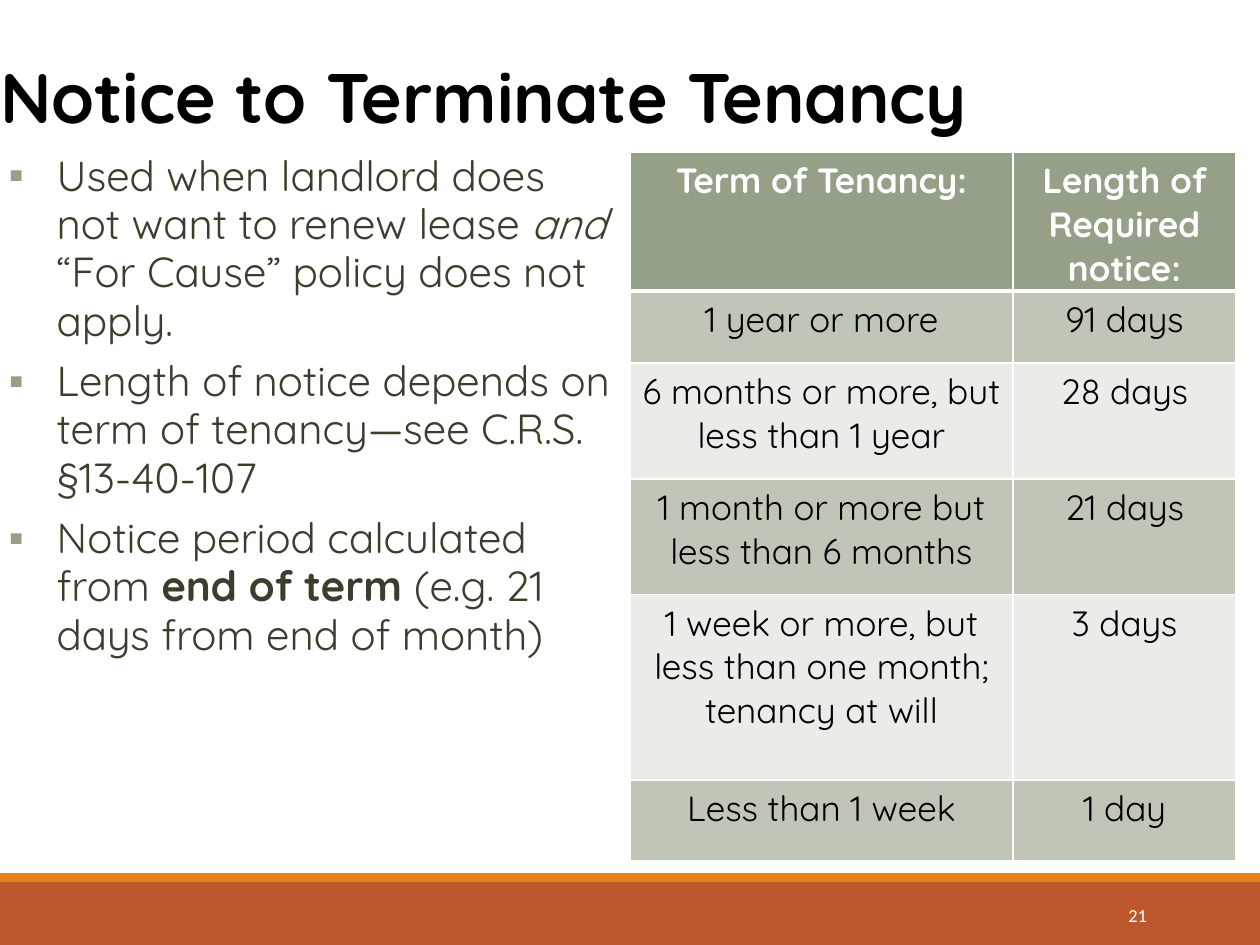
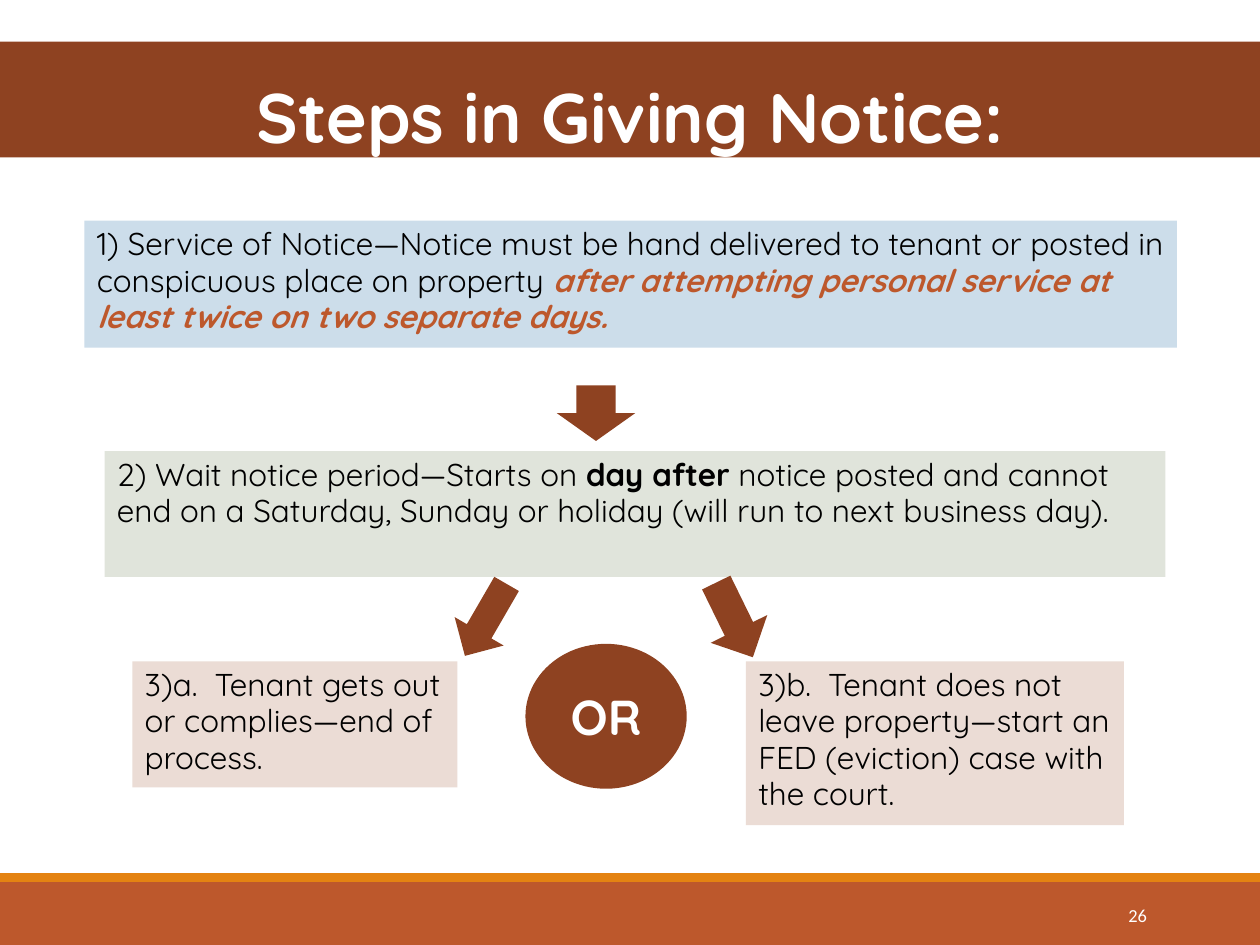
from lxml.etree import SubElement
from pptx import Presentation
from pptx.dml.color import RGBColor
from pptx.enum.shapes import MSO_SHAPE
from pptx.enum.text import MSO_ANCHOR, PP_ALIGN
from pptx.oxml.ns import qn
from pptx.util import Inches, Pt

BLACK, WHITE, BROWN, RUST, ORANGE = "000000", "FFFFFF", "8E4221", "BD582C", "E48312"
SAGE, SAGE_MID, SAGE_PALE, OLIVE = "94A088", "BFC6B8", "EAECE7", "3E3D2D"
FONT, FOOTER_FONT = "Quicksand", "Calibri"
SLIDE_W, SLIDE_H, BAND_TOP, STRIPE_H = 10, 7.5, 7, 0.07
TIGHT = 0.96  # line spacing of running text

# Each paragraph is a list of (text, style); style holds "b" and/or "i".
TENANCY_TITLE, TENANCY_PAGE = "Notice to Terminate Tenancy", 21
TENANCY_POINTS = [
    [("Used when landlord does not want to renew lease ", ""), ("and", "i"),
     (" “For Cause” policy does not apply.", "")],
    [("Length of notice depends on term of tenancy—see C.R.S. §13-40-107", "")],
    [("Notice period calculated from ", ""), ("end of term ", "b"),
     ("(e.g. 21 days from end of month)", "")],
]
NOTICE_PERIODS = [
    ("Term of Tenancy:", "Length of Required notice:"),
    ("1 year or more", "91 days"),
    ("6 months or more, but less than 1 year", "28 days"),
    ("1 month or more but less than 6 months", "21 days"),
    ("1 week or more, but less than one month; tenancy at will", "3 days"),
    ("Less than 1 week", "1 day"),
]
PERIOD_COLUMNS = [3.04, 1.77]
PERIOD_ROWS = [1.01, 0.57, 0.92, 0.92, 1.47, 0.64]

STEPS_TITLE, STEPS_PAGE = "Steps in Giving Notice:", 26
STEPS = [  # box, fill, text
    ((0.67, 1.75, 8.67, 1.01), "CCDDEA",
     [("1) Service of Notice—Notice must be hand delivered to tenant or posted in "
       "conspicuous place on property ", ""),
      ("after attempting personal service at least twice on two separate days.", "bi")]),
    ((0.83, 3.58, 8.42, 1), "E0E4DB",
     [("2) Wait notice period—Starts on ", ""), ("day after", "b"),
      (" notice posted and cannot end on a Saturday, Sunday or holiday "
       "(will run to next business day).", "")]),
    ((1.05, 5.25, 2.58, 1), "EBDCD5",
     [("3)a.  Tenant gets out or complies—end of process.", "")]),
    ((5.92, 5.25, 3, 1.3), "EBDCD5",
     [("3)b.  Tenant does not leave property—start an FED (eviction) case with "
       "the court.", "")]),
]
ARROWS = [  # box, rotation
    ((4.42, 3.06, 0.62, 0.44), 0),
    ((3.63, 4.59, 0.45, 0.66), 30.1),
    ((5.58, 4.59, 0.5, 0.66), 333.9),
]
CHOICE, CHOICE_BOX = "OR", (4.17, 5.11, 1.28, 1.15)


def rgb(color):
    return RGBColor.from_string(color)


def style_run(run, size, color, bold=False, italic=False, font=FONT):
    run.font.size, run.font.name = Pt(size), font
    run.font.bold, run.font.italic = bold, italic
    run.font.color.rgb = rgb(color)


def write_runs(paragraph, pieces, size, color, accent):
    """Add mixed runs; bold italic ones take the accent colour."""
    paragraph.alignment, paragraph.line_spacing = PP_ALIGN.LEFT, TIGHT
    for words, style in pieces:
        run = paragraph.add_run()
        run.text = words
        style_run(run, size, accent if style == "bi" else color,
                  "b" in style, "i" in style)


def write_line(frame, words, size, color, align, bold=True, font=FONT):
    frame.text = words
    paragraph = frame.paragraphs[0]
    paragraph.alignment = align
    style_run(paragraph.runs[0], size, color, bold, font=font)


def add_block(slide, kind, box, fill):
    block = slide.shapes.add_shape(kind, *map(Inches, box))
    block.shadow.inherit = False
    block.fill.solid()
    block.fill.fore_color.rgb = rgb(fill)
    block.line.fill.background()
    return block


def add_frame(slide, box, anchor=MSO_ANCHOR.TOP):
    return prepare(slide.shapes.add_textbox(*map(Inches, box)).text_frame, anchor)


def prepare(frame, anchor, inset=0):
    """Make a frame wrap, with one anchor and one inset on all sides."""
    frame.word_wrap, frame.vertical_anchor = True, anchor
    frame.margin_left = frame.margin_right = Inches(inset)
    frame.margin_top = frame.margin_bottom = Inches(inset / 2)
    return frame


def add_footed_slide(deck, page):
    slide = deck.slides.add_slide(deck.slide_layouts[6])
    add_block(slide, MSO_SHAPE.RECTANGLE,
              (0, BAND_TOP, SLIDE_W, SLIDE_H - BAND_TOP), RUST)
    add_block(slide, MSO_SHAPE.RECTANGLE,
              (0, BAND_TOP - STRIPE_H, SLIDE_W, STRIPE_H), ORANGE)
    number = prepare(add_frame(slide, (8.12, 7.06, 1.08, 0.4)), MSO_ANCHOR.MIDDLE, 0.1)
    write_line(number, str(page), 10.5, WHITE, PP_ALIGN.RIGHT, False, FOOTER_FONT)
    return slide


def write_title(frame, words, color, align):
    write_line(prepare(frame, MSO_ANCHOR.BOTTOM), words, 40, color, align)


def add_bullet(paragraph):
    paragraph.space_before, paragraph.space_after = Pt(4.8), Pt(2)
    properties = paragraph._p.get_or_add_pPr()
    properties.set("marL", str(Inches(0.45)))
    properties.set("indent", str(Inches(-0.38)))
    bullet_color = SubElement(properties, qn("a:buClr"))
    SubElement(bullet_color, qn("a:srgbClr"), val=SAGE)
    SubElement(properties, qn("a:buFont"), typeface=FOOTER_FONT)
    SubElement(properties, qn("a:buChar"), char="▪")


def border_cell(cell, widths):
    """Draw white borders; widths maps a side (L, R, T, B) to points."""
    properties = cell._tc.get_or_add_tcPr()
    for position, (side, width) in enumerate(widths.items()):
        line = properties.makeelement(qn(f"a:ln{side}"), {"w": str(Pt(width))})
        paint = SubElement(line, qn("a:solidFill"))
        SubElement(paint, qn("a:srgbClr"), val=WHITE)
        properties.insert(position, line)


def add_period_table(slide):
    periods = slide.shapes.add_table(
        len(PERIOD_ROWS), len(PERIOD_COLUMNS), Inches(5), Inches(1.21),
        Inches(sum(PERIOD_COLUMNS)), Inches(sum(PERIOD_ROWS))).table
    for column, width in zip(periods.columns, PERIOD_COLUMNS):
        column.width = Inches(width)
    for index, (height, entries) in enumerate(zip(PERIOD_ROWS, NOTICE_PERIODS)):
        periods.rows[index].height = Inches(height)
        header = index == 0
        fill = SAGE if header else (SAGE_PALE, SAGE_MID)[index % 2]
        widths = {"L": 0.96, "R": 0.96, "T": 3 if index == 1 else 0.96,
                  "B": 3 if header else 0.96}
        for column, words in enumerate(entries):
            cell = periods.cell(index, column)
            cell.fill.solid()
            cell.fill.fore_color.rgb = rgb(fill)
            write_line(cell.text_frame, words, 20, WHITE if header else BLACK,
                       PP_ALIGN.CENTER, header)
            border_cell(cell, widths)


def build_tenancy(deck):
    slide = add_footed_slide(deck, TENANCY_PAGE)
    write_title(add_frame(slide, (0, 0.42, 8.79, 0.67)), TENANCY_TITLE, BLACK,
                PP_ALIGN.LEFT)
    points = add_frame(slide, (0, 1.21, 4.89, 6.04))
    for index, pieces in enumerate(TENANCY_POINTS):
        paragraph = points.add_paragraph() if index else points.paragraphs[0]
        write_runs(paragraph, pieces, 24, OLIVE, OLIVE)
        add_bullet(paragraph)
    add_period_table(slide)


def build_steps(deck):
    slide = add_footed_slide(deck, STEPS_PAGE)
    banner = add_block(slide, MSO_SHAPE.RECTANGLE, (0, 0.33, SLIDE_W, 0.92), BROWN)
    write_title(banner.text_frame, STEPS_TITLE, WHITE, PP_ALIGN.CENTER)
    for box, fill, pieces in STEPS:
        step = add_block(slide, MSO_SHAPE.RECTANGLE, box, fill)
        frame = prepare(step.text_frame, MSO_ANCHOR.TOP, 0.1)
        write_runs(frame.paragraphs[0], pieces, 18, BLACK, RUST)
    for box, rotation in ARROWS:
        add_block(slide, MSO_SHAPE.DOWN_ARROW, box, BROWN).rotation = rotation
    choice = add_block(slide, MSO_SHAPE.OVAL, CHOICE_BOX, BROWN)
    write_line(prepare(choice.text_frame, MSO_ANCHOR.MIDDLE, 0.1), CHOICE, 28, WHITE,
               PP_ALIGN.CENTER)


def main():
    deck = Presentation()
    deck.slide_width, deck.slide_height = Inches(SLIDE_W), Inches(SLIDE_H)
    build_tenancy(deck)
    build_steps(deck)
    deck.save("out.pptx")


if __name__ == "__main__":
    main()
